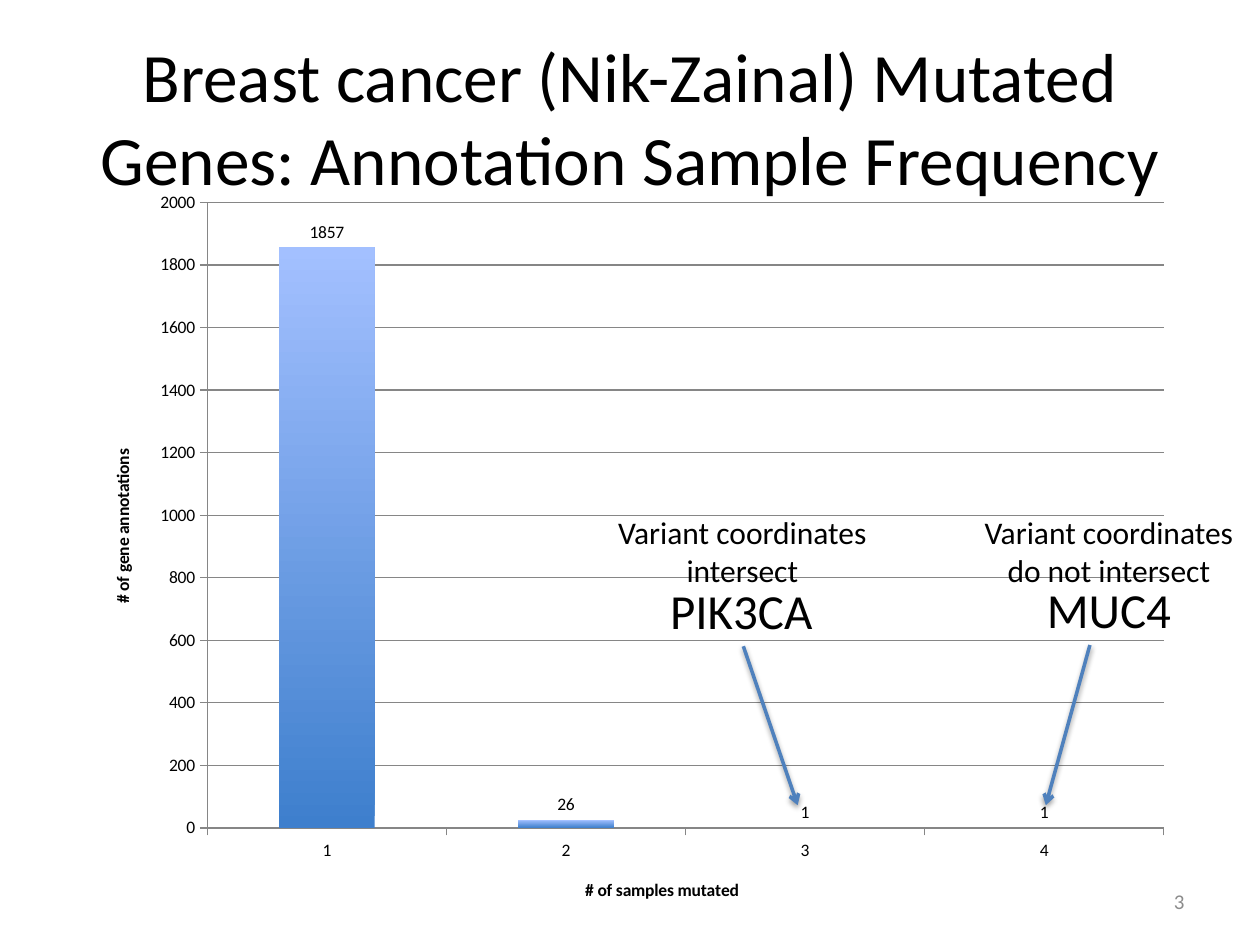
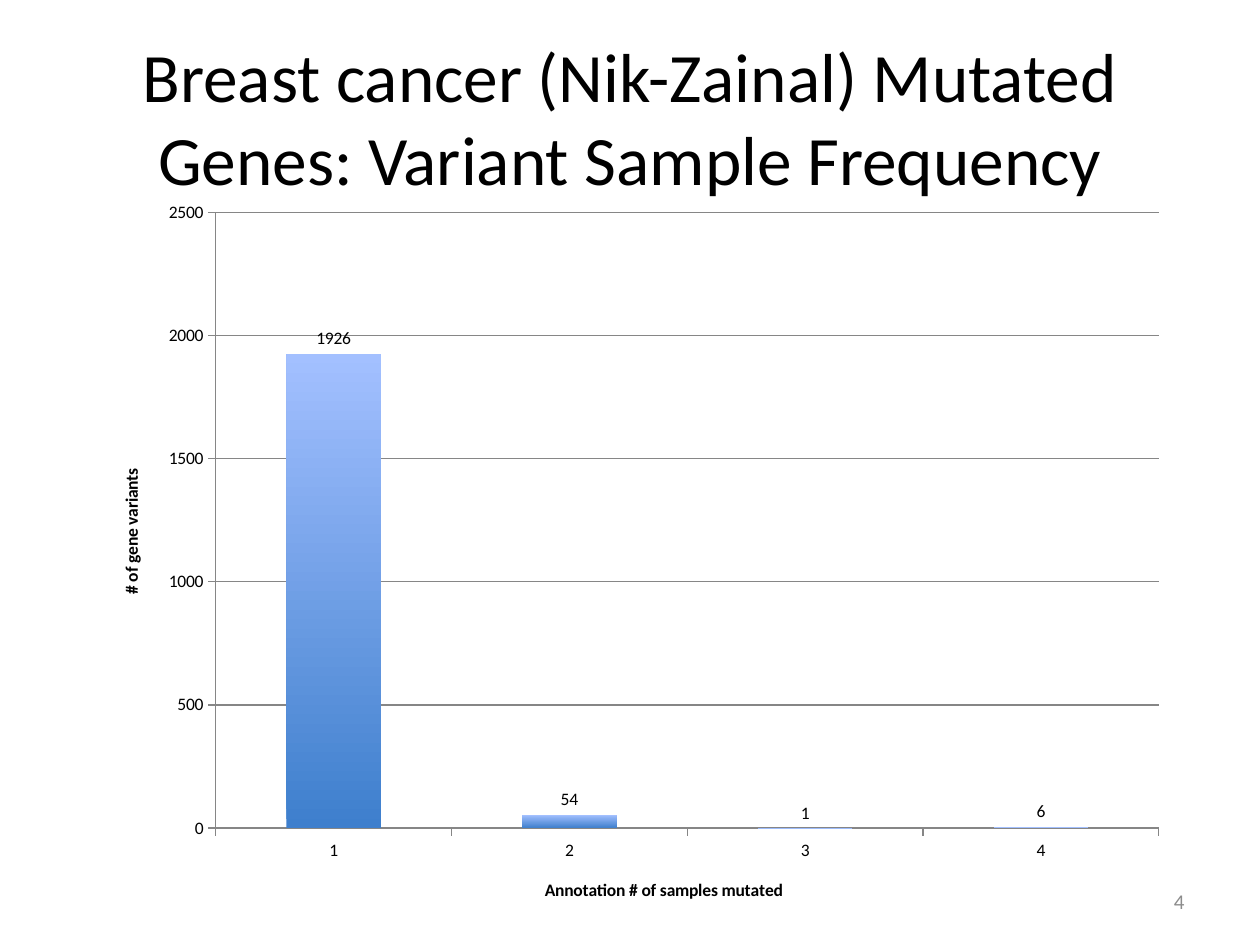
from lxml import etree
from pptx import Presentation
from pptx.chart.data import CategoryChartData
from pptx.dml.color import RGBColor
from pptx.enum.chart import XL_CHART_TYPE, XL_LABEL_POSITION, XL_TICK_MARK
from pptx.enum.shapes import MSO_CONNECTOR
from pptx.enum.text import MSO_ANCHOR, MSO_AUTO_SIZE, PP_ALIGN
from pptx.oxml import parse_xml
from pptx.oxml.ns import nsdecls, qn
from pptx.util import Pt

COLUMNS = XL_CHART_TYPE.COLUMN_CLUSTERED
LABEL_ABOVE = XL_LABEL_POSITION.OUTSIDE_END
TICK_OUT, TICK_NONE = XL_TICK_MARK.OUTSIDE, XL_TICK_MARK.NONE
STRAIGHT = MSO_CONNECTOR.STRAIGHT
MIDDLE, TOP = MSO_ANCHOR.MIDDLE, MSO_ANCHOR.TOP
NO_AUTOFIT = MSO_AUTO_SIZE.NONE
LEFT, CENTER, RIGHT = PP_ALIGN.LEFT, PP_ALIGN.CENTER, PP_ALIGN.RIGHT

FONT = "Calibri"
BLACK = RGBColor(0x00, 0x00, 0x00)
NUMBER_GREY = RGBColor(0x8C, 0x8C, 0x8C)
AXIS_GREY = RGBColor(0x86, 0x86, 0x86)
ARROW_BLUE = RGBColor(0x4F, 0x81, 0xBD)
BAR_TOP = RGBColor(0xA3, 0xC0, 0xFF)
BAR_BOTTOM = RGBColor(0x3E, 0x7F, 0xCD)

TITLE_BOX = (36, 21.6, 648, 90)
NUMBER_BOX = (516, 500.5, 168, 28.75)
SAMPLE_COUNTS = ("1", "2", "3", "4")

ARROW_SHADOW = (
    f'<a:effectLst {nsdecls("a")}>'
    '<a:outerShdw blurRad="40000" dist="20000" dir="5400000" rotWithShape="0">'
    '<a:srgbClr val="000000"><a:alpha val="38000"/></a:srgbClr>'
    '</a:outerShdw></a:effectLst>'
)


def points(box):
    return [Pt(length) for length in box]


def style_font(font, size, color=BLACK, bold=False):
    font.name = FONT
    font.size = Pt(size)
    font.bold = bold
    font.color.rgb = color


def fill_text(frame, lines, size, align, color=BLACK, anchor=TOP, wrap=True):
    frame.word_wrap = wrap
    frame.auto_size = NO_AUTOFIT
    frame.vertical_anchor = anchor
    frame.text = "\n".join(lines)
    for para in frame.paragraphs:
        para.alignment = align
        style_font(para.font, size, color)


def add_text(page, box, lines, size, align, **options):
    shape = page.shapes.add_textbox(*points(box))
    fill_text(shape.text_frame, lines, size, align, **options)


def add_page(deck, title, number):
    page = deck.slides.add_slide(deck.slide_layouts[5])
    heading = page.shapes.title
    heading.left, heading.top, heading.width, heading.height = points(TITLE_BOX)
    fill_text(heading.text_frame, [title], 39.6, CENTER, anchor=MIDDLE)
    add_text(page, NUMBER_BOX, [str(number)], 12, RIGHT,
             color=NUMBER_GREY, anchor=MIDDLE)
    return page


def style_axis(axis, title):
    axis.major_tick_mark = TICK_OUT
    axis.minor_tick_mark = TICK_NONE
    axis.format.line.color.rgb = AXIS_GREY
    axis.format.line.width = Pt(0.75)
    style_font(axis.tick_labels.font, 10)
    frame = axis.axis_title.text_frame
    frame.text = title
    style_font(frame.paragraphs[0].font, 10, bold=True)


def add_frequency_chart(page, box, values, category_title, value_title):
    data = CategoryChartData()
    data.categories = SAMPLE_COUNTS
    data.add_series("Series 1", values)
    chart = page.shapes.add_chart(COLUMNS, *points(box), data).chart
    chart.has_title = False
    chart.has_legend = False
    style_font(chart.font, 10)

    style_axis(chart.category_axis, category_title)
    style_axis(chart.value_axis, value_title)
    gridline = chart.value_axis.major_gridlines.format.line
    gridline.color.rgb = AXIS_GREY
    gridline.width = Pt(0.75)

    plot = chart.plots[0]
    plot.gap_width = 150
    plot.vary_by_categories = False
    plot.has_data_labels = True
    plot.data_labels.show_value = True
    plot.data_labels.position = LABEL_ABOVE
    style_font(plot.data_labels.font, 10)

    fill = plot.series[0].format.fill
    fill.gradient()
    fill.gradient_angle = 90
    for stop, color in zip(fill.gradient_stops, (BAR_BOTTOM, BAR_TOP)):
        stop.color.rgb = color


def add_arrow(page, start, end):
    arrow = page.shapes.add_connector(STRAIGHT, *points(start + end))
    arrow.line.color.rgb = ARROW_BLUE
    arrow.line.width = Pt(2)
    outline = arrow.line._get_or_add_ln()
    etree.SubElement(outline, qn("a:tailEnd"), type="arrow")
    outline.addnext(parse_xml(ARROW_SHADOW))


def add_gene_callout(page, box, verdict, gene, gene_box, start, end):
    """Note, gene name and arrow; all places count from the box's corner."""
    left, top = box[:2]

    def shifted(x, y, *size):
        return (left + x, top + y) + size

    add_text(page, box, ["Variant coordinates", verdict], 18, CENTER, wrap=False)
    add_text(page, shifted(*gene_box), [gene], 28, LEFT, wrap=False)
    add_arrow(page, shifted(*start), shifted(*end))


def build_annotation_page(deck):
    page = add_page(
        deck,
        "Breast cancer (Nik-Zainal) Mutated Genes: Annotation Sample Frequency", 3)
    add_frequency_chart(page, (49, 101.5, 628.5, 427.7), (1857, 26, 1, 1),
                        "# of samples mutated", "# of gene annotations")
    add_gene_callout(page, (344.2, 289.5, 160, 51), "intersect", "PIK3CA",
                     (31.7, 38.8, 96.5, 41), (80.6, 79.8), (111.6, 170.6))
    add_gene_callout(page, (553.7, 289.5, 160, 51), "do not intersect", "MUC4",
                     (37.4, 38.1, 86.4, 41), (69.1, 79.1), (43.9, 170.6))


def build_variant_page(deck):
    page = add_page(
        deck,
        "Breast cancer (Nik-Zainal) Mutated Genes: Variant Sample Frequency", 4)
    add_frequency_chart(page, (54, 107.3, 620.6, 421.9), (1926, 54, 1, 6),
                        "Annotation # of samples mutated", "# of gene variants")


def main():
    deck = Presentation()
    deck.slide_width, deck.slide_height = Pt(720), Pt(540)
    build_annotation_page(deck)
    build_variant_page(deck)
    deck.save("out.pptx")


if __name__ == "__main__":
    main()
